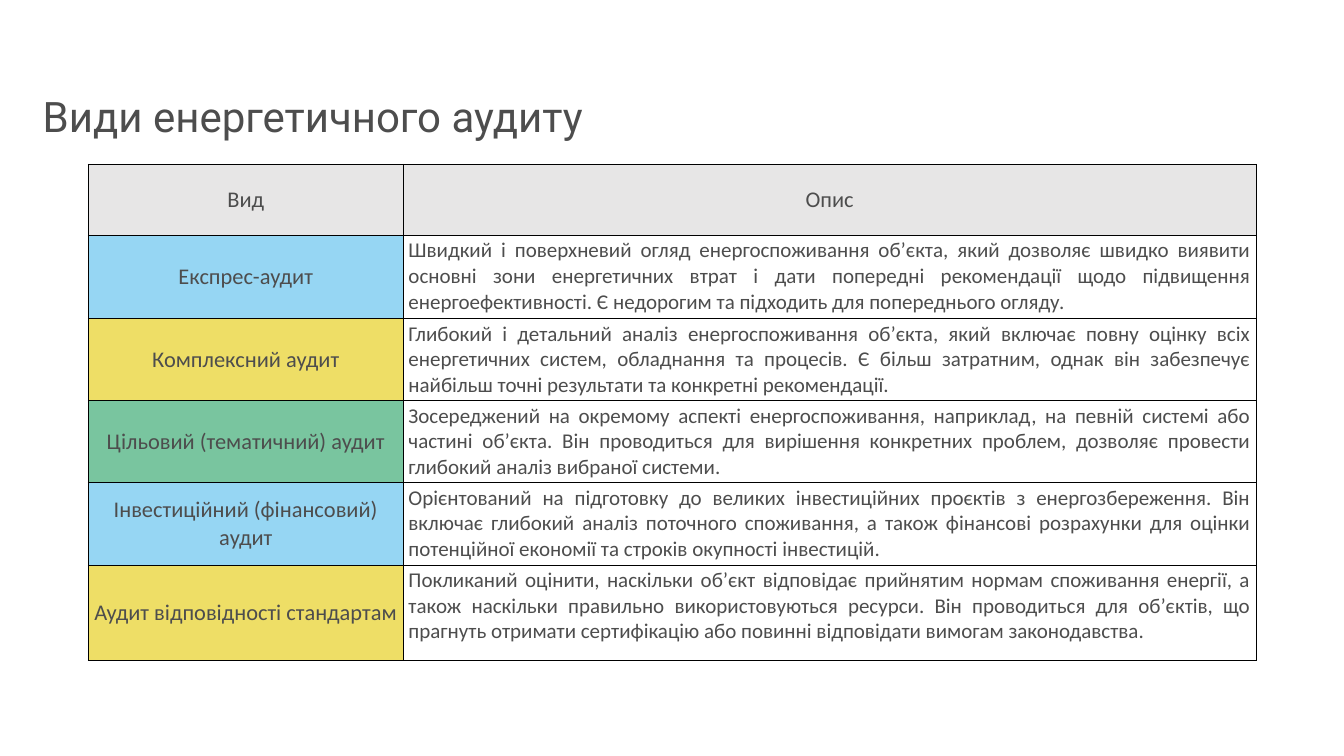
from lxml.etree import SubElement as Sub
from pptx import Presentation
from pptx.dml.color import RGBColor as RGB
from pptx.enum.text import MSO_ANCHOR as Anchor, PP_ALIGN as Align
from pptx.oxml.ns import qn
from pptx.util import Inches, Pt

INK = RGB(0x4D, 0x4D, 0x4D)
GREY = RGB(0xE7, 0xE6, 0xE6)
BLUE = RGB(0x96, 0xD6, 0xF3)
YELLOW = RGB(0xEE, 0xDE, 0x66)
GREEN = RGB(0x79, 0xC5, 0x9F)
BLACK = RGB(0, 0, 0)

WIDE, HIGH = Inches(26.67), Inches(15)

# Boxes as percent of the slide: left, top, width, height
TITLE_BOX = (2.81, 12.67, 95.91, 6)
TABLE_BOX = (6.56, 21.73, 86.88, 65.67)

# Shares of the table
COLS = (27, 73)
ROWS = (1.41, 1.65, 1.63, 1.63, 1.63, 1.9)

HEADS = ("Вид", "Опис")
AUDITS = (
    ("Експрес-аудит", BLUE,
     "Швидкий і поверхневий огляд енергоспоживання об’єкта, який дозволяє "
     "швидко виявити основні зони енергетичних втрат і дати попередні "
     "рекомендації щодо підвищення енергоефективності. Є недорогим та "
     "підходить для попереднього огляду."),
    ("Комплексний аудит", YELLOW,
     "Глибокий і детальний аналіз енергоспоживання об’єкта, який включає "
     "повну оцінку всіх енергетичних систем, обладнання та процесів. Є "
     "більш затратним, однак він забезпечує найбільш точні результати та "
     "конкретні рекомендації."),
    ("Цільовий (тематичний) аудит", GREEN,
     "Зосереджений на окремому аспекті енергоспоживання, наприклад, на "
     "певній системі або частині об’єкта. Він проводиться для вирішення "
     "конкретних проблем, дозволяє провести глибокий аналіз вибраної "
     "системи."),
    ("Інвестиційний (фінансовий) аудит", BLUE,
     "Орієнтований на підготовку до великих інвестиційних проєктів з "
     "енергозбереження. Він включає глибокий аналіз поточного споживання, "
     "а також фінансові розрахунки для оцінки потенційної економії та "
     "строків окупності інвестицій."),
    ("Аудит відповідності стандартам", YELLOW,
     "Покликаний оцінити, наскільки об’єкт відповідає прийнятим нормам "
     "споживання енергії, а також наскільки правильно використовуються "
     "ресурси. Він проводиться для об’єктів, що прагнуть отримати "
     "сертифікацію або повинні відповідати вимогам законодавства."),
)


def place(box):
    sides = (WIDE, HIGH, WIDE, HIGH)
    return [int(side * part / 100) for side, part in zip(sides, box)]


def write(frame, text, size, face, align):
    frame.text = text
    para = frame.paragraphs[0]
    para.alignment = align
    font = para.runs[0].font
    font.size, font.name = Pt(size), face
    font.color.rgb = INK
    return para


def border(cell):
    props = cell._tc.get_or_add_tcPr()
    for side in ("lnL", "lnR", "lnT", "lnB"):
        line = Sub(props, qn(f"a:{side}"), w=str(Pt(1)))
        fill = Sub(line, qn("a:solidFill"))
        Sub(fill, qn("a:srgbClr"), val=str(BLACK))


def fill_cell(cell, text, color=None):
    """Labels have a colour and are centred; descriptions are plain."""
    border(cell)
    if color is None:
        cell.fill.background()
        cell.vertical_anchor = Anchor.TOP
        size, align = 30, Align.JUSTIFY
    else:
        cell.fill.solid()
        cell.fill.fore_color.rgb = color
        cell.vertical_anchor = Anchor.MIDDLE
        size, align = 32, Align.CENTER
    write(cell.text_frame, text, size, "Calibri", align)


def add_title(slide, box):
    frame = slide.shapes.add_textbox(*place(box)).text_frame
    frame.word_wrap = True
    frame.vertical_anchor = Anchor.MIDDLE
    frame.margin_top = frame.margin_bottom = 0
    para = write(frame, "Види енергетичного аудиту", 60, "Roboto", Align.LEFT)
    para.line_spacing = 0.9


def add_grid(slide, box):
    left, top, width, height = place(box)
    table = slide.shapes.add_table(
        len(ROWS), len(COLS), left, top, width, height).table
    table.horz_banding = False
    for col, share in zip(table.columns, COLS):
        col.width = int(width * share / sum(COLS))
    for row, share in zip(table.rows, ROWS):
        row.height = int(height * share / sum(ROWS))

    # Header row
    for col, head in enumerate(HEADS):
        fill_cell(table.cell(0, col), head, GREY)

    # One row for each kind of audit
    for row, (kind, color, about) in enumerate(AUDITS, 1):
        fill_cell(table.cell(row, 0), kind, color)
        fill_cell(table.cell(row, 1), about)


def main():
    deck = Presentation()
    deck.slide_width, deck.slide_height = WIDE, HIGH
    slide = deck.slides.add_slide(deck.slide_layouts[6])
    add_title(slide, TITLE_BOX)
    add_grid(slide, TABLE_BOX)
    deck.save("out.pptx")


if __name__ == "__main__":
    main()
